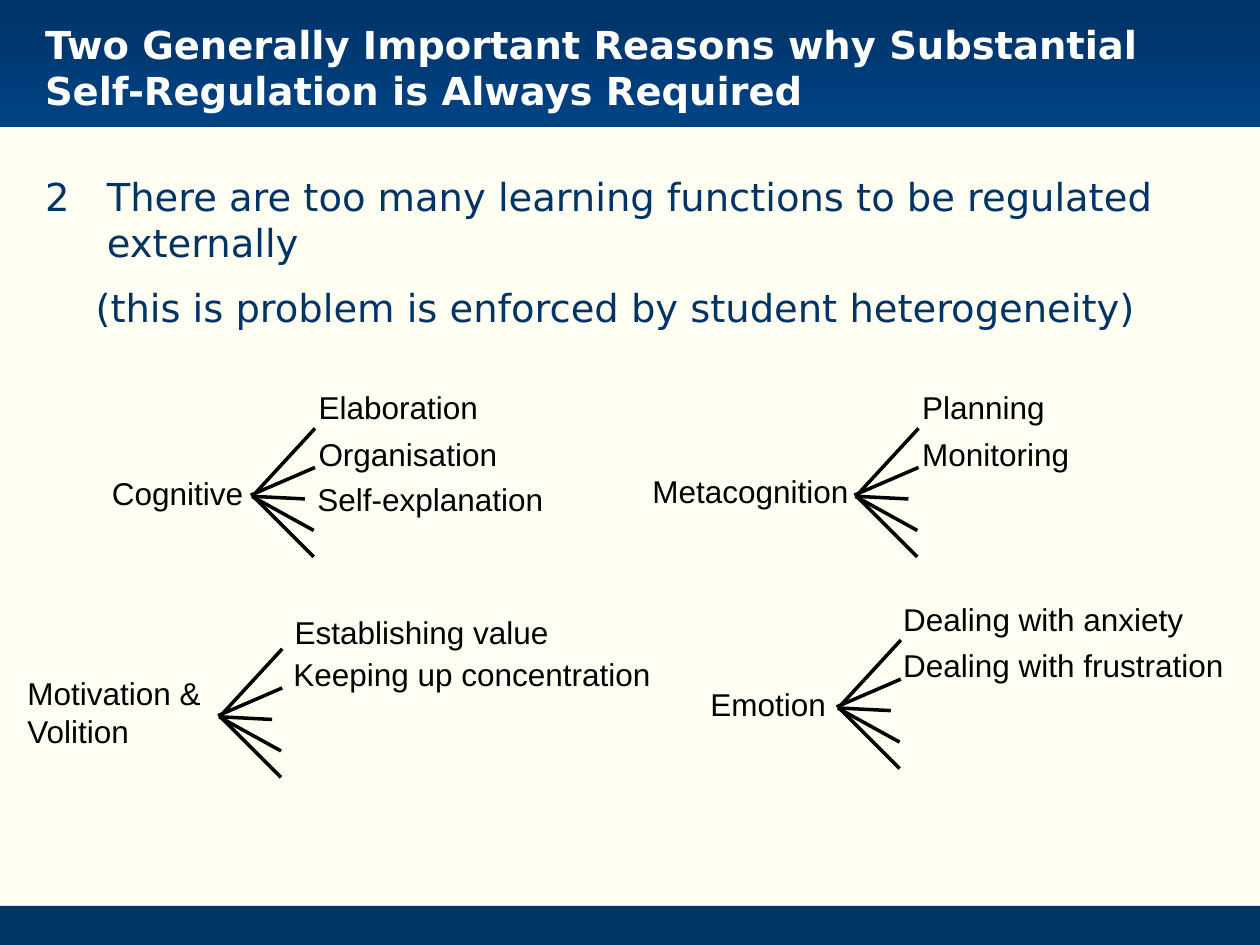
from dataclasses import dataclass
from typing import NamedTuple

from lxml import etree
from pptx import Presentation
from pptx import util as u
from pptx.dml.color import RGBColor
from pptx.enum import shapes, text
from pptx.oxml.ns import qn


@dataclass(frozen=True)
class Theme:
    paper: RGBColor = RGBColor(0xFF, 0xFE, 0xF3)
    navy: RGBColor = RGBColor(0x00, 0x33, 0x66)
    blue: RGBColor = RGBColor(0x00, 0x43, 0x85)
    white: RGBColor = RGBColor(0xFF, 0xFF, 0xFF)
    black: RGBColor = RGBColor(0x00, 0x00, 0x00)
    heading_font: str = "DejaVu Sans"
    label_font: str = "Arial"
    heading_size: u.Pt = u.Pt(22)
    label_size: u.Pt = u.Pt(18)
    ray_width: u.Pt = u.Pt(2)


class Label(NamedTuple):
    lines: tuple[str, ...]
    x: float
    y: float
    w: float
    h: float = 0.4
    wrap: bool = False


class Fan(NamedTuple):
    x: float
    y: float
    labels: tuple[Label, ...]


THEME = Theme()

# Rays of one fan, relative to its top left corner: x1, y1, x2, y2
RAYS = (
    (0.04, 0.51, 0.51, 0),
    (0, 0.53, 0.51, 0.31),
    (0.03, 0.54, 0.43, 0.56),
    (0.01, 0.54, 0.5, 0.81),
    (0.5, 1.02, 0.02, 0.54),
)

FANS = (
    Fan(1.99, 3.4, (
        Label(("Cognitive",), 0.79, 3.71, 1.25),
        Label(("Elaboration",), 2.43, 3.03, 1.48),
        Label(("Organisation",), 2.43, 3.4, 1.63),
        Label(("Self-explanation",), 2.42, 3.76, 2.01),
    )),
    Fan(6.78, 3.4, (
        Label(("Metacognition",), 5.08, 3.7, 1.84),
        Label(("Planning",), 7.22, 3.03, 1.18),
        Label(("Monitoring",), 7.22, 3.4, 1.38),
    )),
    Fan(1.73, 5.15, (
        Label(("Motivation &", "Volition"), 0.12, 5.3, 1.66, 0.71),
        Label(("Establishing value",), 2.24, 4.82, 2.55, wrap=True),
        Label(("Keeping up concentration",), 2.23, 5.15, 3.05, wrap=True),
    )),
    Fan(6.64, 5.08, (
        Label(("Emotion",), 5.54, 5.39, 1.13),
        Label(("Dealing with anxiety",), 7.07, 4.71, 2.55, wrap=True),
        Label(("Dealing with frustration",), 7.07, 5.08, 2.76, wrap=True),
    )),
)


def add_band(s, y: float, h: float):
    """Draw a full-width navy band."""
    sp = s.shapes.add_shape(shapes.MSO_SHAPE.RECTANGLE, 0, u.Inches(y),
                            u.Inches(10), u.Inches(h))
    sp.shadow.inherit = False
    sp.line.fill.background()
    sp.fill.solid()
    sp.fill.fore_color.rgb = THEME.navy
    return sp


def add_text(s, box: Label, font: str, size: u.Pt, color: RGBColor,
             bold: bool = False):
    """Write each line of the box as a paragraph and return the text frame."""
    sp = s.shapes.add_textbox(u.Inches(box.x), u.Inches(box.y),
                              u.Inches(box.w), u.Inches(box.h))
    tf = sp.text_frame
    tf.word_wrap = box.wrap
    for i, line in enumerate(box.lines):
        p = tf.add_paragraph() if i else tf.paragraphs[0]
        r = p.add_run()
        r.text = line
        r.font.name, r.font.size, r.font.bold = font, size, bold
        r.font.color.rgb = color
    return tf


def add_ray(s, x1: float, y1: float, x2: float, y2: float) -> None:
    c = s.shapes.add_connector(shapes.MSO_CONNECTOR.STRAIGHT, u.Inches(x1),
                               u.Inches(y1), u.Inches(x2), u.Inches(y2))
    c.line.color.rgb = THEME.black
    c.line.width = THEME.ray_width
    etree.SubElement(c._element.spPr, qn("a:effectLst"))


def add_fan(s, fan: Fan) -> None:
    for label in fan.labels:
        add_text(s, label, THEME.label_font, THEME.label_size, THEME.black)
    for x1, y1, x2, y2 in RAYS:
        add_ray(s, fan.x + x1, fan.y + y1, fan.x + x2, fan.y + y2)


def set_indent(p, left: float, first: float) -> None:
    pPr = p._p.get_or_add_pPr()
    pPr.set("marL", str(u.Inches(left)))
    pPr.set("indent", str(u.Inches(first)))


def main() -> None:
    prs = Presentation()
    prs.slide_width, prs.slide_height = u.Inches(10), u.Inches(7.5)
    s = prs.slides.add_slide(prs.slide_layouts[6])
    s.background.fill.solid()
    s.background.fill.fore_color.rgb = THEME.paper

    # Footer and header bands
    add_band(s, 7.19, 0.31)
    header = add_band(s, 0, 1.01)
    header.fill.gradient()
    header.fill.gradient_angle = 270
    for stop, color, position in zip(header.fill.gradient_stops,
                                     (THEME.navy, THEME.blue), (0, 1)):
        stop.color.rgb = color
        stop.position = position

    # Title
    title = Label(("Two Generally Important Reasons why Substantial "
                   "Self-Regulation is Always Required",),
                  0.26, 0.11, 8.96, 0.84, True)
    tf = add_text(s, title, THEME.heading_font, THEME.heading_size,
                  THEME.white, bold=True)
    tf.vertical_anchor = text.MSO_ANCHOR.MIDDLE

    # Statement
    statement = Label(
        ("2\tThere are too many learning functions to be regulated externally",
         "(this is problem is enforced by student heterogeneity)"),
        0.26, 1.32, 9.45, 0.85, True)
    tf = add_text(s, statement, THEME.heading_font, THEME.heading_size,
                  THEME.navy)
    point, remark = tf.paragraphs
    set_indent(point, 0.49, -0.49)
    set_indent(remark, 0.4, 0)
    remark.space_before = THEME.heading_size // 2

    # Learning functions
    for fan in FANS:
        add_fan(s, fan)

    prs.save("out.pptx")


if __name__ == "__main__":
    main()
